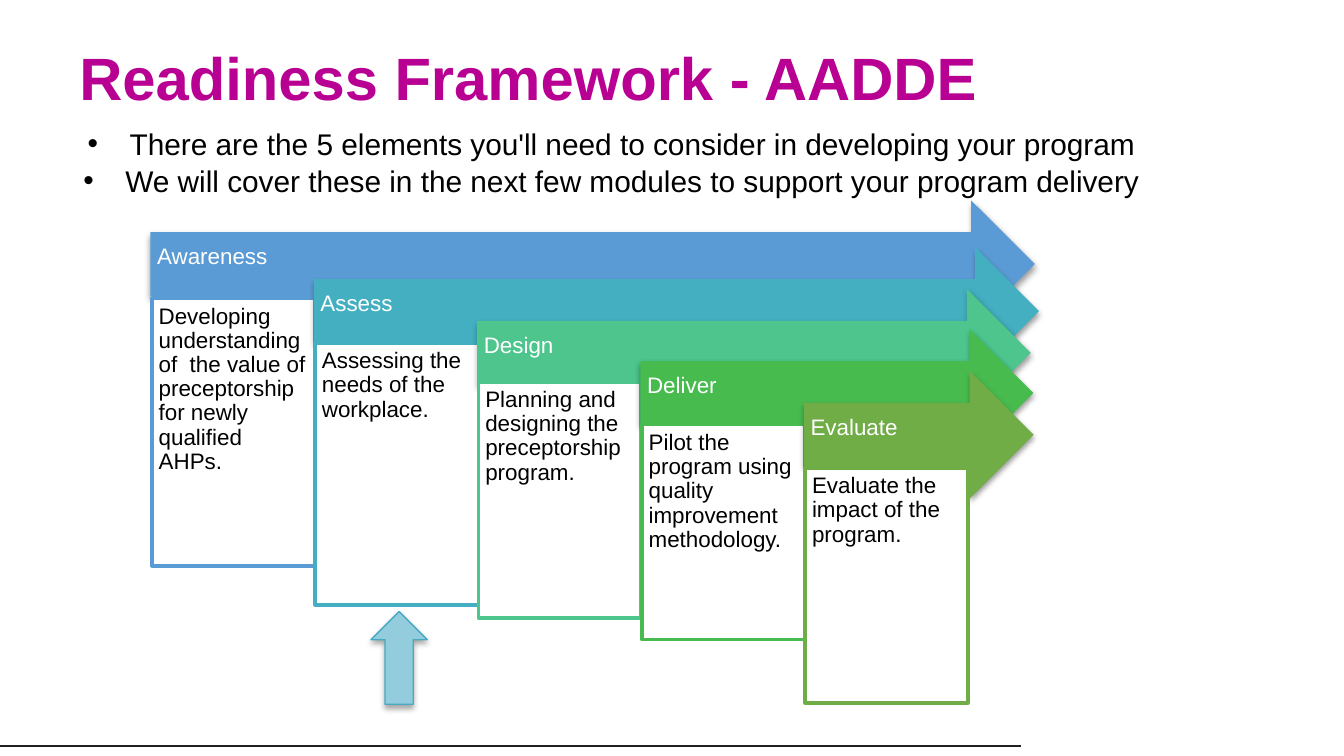
from lxml import etree
from pptx import Presentation
from pptx.dml.color import RGBColor
from pptx.enum.shapes import MSO_CONNECTOR, MSO_SHAPE
from pptx.enum.text import MSO_ANCHOR, MSO_AUTO_SIZE, PP_ALIGN
from pptx.oxml.ns import qn
from pptx.util import Pt

LEFT, CENTER = PP_ALIGN.LEFT, PP_ALIGN.CENTER
TOP, MIDDLE = MSO_ANCHOR.TOP, MSO_ANCHOR.MIDDLE
RECTANGLE, RIGHT_ARROW, DOWN_ARROW = (
    MSO_SHAPE.RECTANGLE, MSO_SHAPE.RIGHT_ARROW, MSO_SHAPE.DOWN_ARROW)

# Content
HEADING = "Readiness Framework - AADDE"
POINTS = [
    "There are the 5 elements you'll need to consider in developing your program",
    "We will cover these in the next few modules to support your program delivery",
]
# label, description, colour, arrow top, arrow tip, box top, box width, box height
STEPS = [
    ("Awareness", "Developing understanding of  the value of preceptorship for newly qualified AHPs.",
     "5B9BD5", 107.3, 554.4, 159.8, 87.1, 143.3),
    ("Assess", "Assessing the needs of the workplace.",
     "43AFC0", 132.5, 556.6, 183.6, 90.7, 140.4),
    ("Design", "Planning and designing the preceptorship program.",
     "4DC58D", 154.8, 552.2, 204.5, 87.1, 126.7),
    ("Deliver", "Pilot the program using quality improvement methodology.",
     "48BB4F", 176.4, 553.6, 227.5, 87.1, 115.2),
    ("Evaluate", "Evaluate the impact of the program.",
     "70AD47", 198.7, 553.7, 250.6, 87.1, 126),
]
FIRST_LEFT, STEP_PITCH, ARROW_HEIGHT, BOX_OFFSET = 80.6, 87.5, 68.4, 0.8
LABEL_INSETS = (3.6, 3.6, 20.2, 10.8)
BOX_INSETS = (3.6, 3.6, 3.6, 3.6)


def colour(value):
    return RGBColor.from_string(value)


def place(shape, left, top, width, height):
    shape.left, shape.top, shape.width, shape.height = map(Pt, (left, top, width, height))


def style_text(paragraph, size, ink, align=LEFT, spacing=1.0, bold=False):
    paragraph.alignment = align
    paragraph.line_spacing = spacing
    paragraph.space_before = Pt(0)
    font = paragraph.font
    font.name, font.size, font.bold = "Arial", Pt(size), bold
    font.color.rgb = colour(ink)


def add_shape(kind, area, fill, line=None, line_width=0.75):
    shape = slide.shapes.add_shape(kind, *map(Pt, area))
    shape.fill.solid()
    shape.fill.fore_color.rgb = colour(fill)
    if line:
        shape.line.color.rgb = colour(line)
        shape.line.width = Pt(line_width)
    else:
        shape.line.fill.background()
    shape.shadow.inherit = False
    return shape


def add_shadow(shape, distance, opacity):
    effects = shape._element.spPr.find(qn("a:effectLst"))
    shadow = etree.SubElement(effects, qn("a:outerShdw"), blurRad=str(Pt(3.1)),
                              dist=str(Pt(distance)), dir="5400000", rotWithShape="0")
    black = etree.SubElement(shadow, qn("a:srgbClr"), val="000000")
    etree.SubElement(black, qn("a:alpha"), val=str(opacity * 1000))


def write(shape, text, ink, insets, anchor):
    frame = shape.text_frame
    frame.word_wrap = True
    frame.vertical_anchor = anchor
    (frame.margin_left, frame.margin_top,
     frame.margin_right, frame.margin_bottom) = map(Pt, insets)
    frame.text = text
    style_text(frame.paragraphs[0], 12, ink, spacing=0.9)


deck = Presentation()
deck.slide_width, deck.slide_height = Pt(720), Pt(405)
slide = deck.slides.add_slide(deck.slide_layouts[1])

# Title
title = slide.shapes.title
place(title, 0, 0, 720, 82)
title.fill.solid()
title.fill.fore_color.rgb = colour("FFFFFF")
title.text_frame.text = HEADING
title.text_frame.vertical_anchor = MIDDLE
title.text_frame.auto_size = MSO_AUTO_SIZE.NONE
heading = title.text_frame.paragraphs[0]
style_text(heading, 32, "B80093", bold=True)
heading._p.get_or_add_pPr().set("indent", str(Pt(35.3)))

# Bulleted introduction
intro = slide.placeholders[1]
place(intro, -12.2, 62.6, 679.7, 46)
intro.text_frame.text = "\n".join(POINTS)
intro.text_frame.auto_size = MSO_AUTO_SIZE.NONE
for point in intro.text_frame.paragraphs:
    properties = point._p.get_or_add_pPr()
    properties.set("marL", str(Pt(22.5)))
    properties.set("indent", str(Pt(-22.5)))
    etree.SubElement(properties, qn("a:buChar"), char="•")
    style_text(point, 16, "000000", CENTER, 1.05)

# Footer rule
rule = slide.shapes.add_connector(MSO_CONNECTOR.STRAIGHT, Pt(547), Pt(399.6), Pt(0), Pt(399.6))
rule.line.color.rgb = colour("212121")
rule.line.width = Pt(0.75)
etree.SubElement(rule._element.spPr, qn("a:effectLst"))

# Pointer to the current step
pointer = add_shape(DOWN_ARROW, (198.7, 327.6, 30.2, 49.7), "93CDDD", "46AAC5")
pointer.rotation = 180
add_shadow(pointer, 1.8, 35)

# Overlapping steps: arrow with label, box with description
for index, (label, description, hue, arrow_top, tip, box_top, box_width, box_height) in enumerate(STEPS):
    left = FIRST_LEFT + index * STEP_PITCH
    arrow = add_shape(RIGHT_ARROW, (left, arrow_top, tip - left, ARROW_HEIGHT), hue)
    add_shadow(arrow, 1.6, 38)
    write(arrow, label, "FFFFFF", LABEL_INSETS, MIDDLE)
    box = add_shape(RECTANGLE, (left + BOX_OFFSET, box_top, box_width, box_height), "FFFFFF", hue, 2)
    write(box, description, "000000", BOX_INSETS, TOP)

deck.save("out.pptx")
